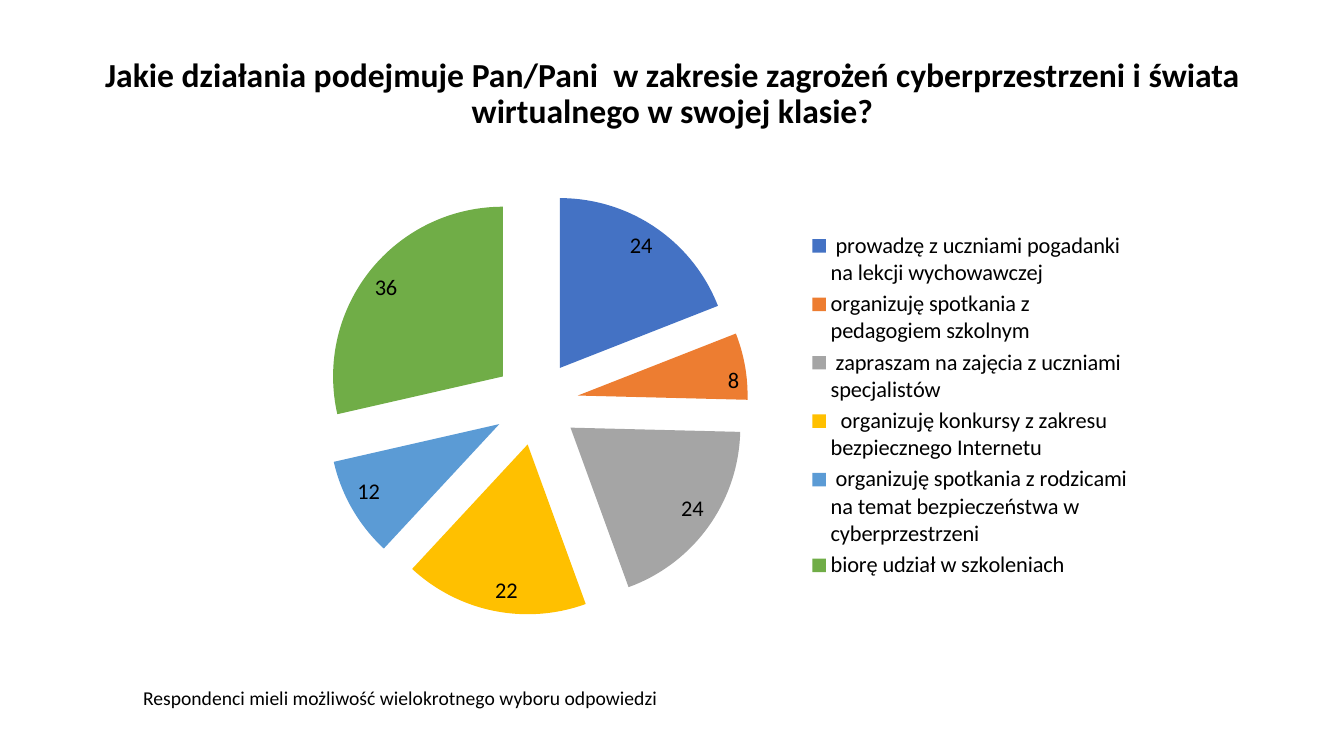
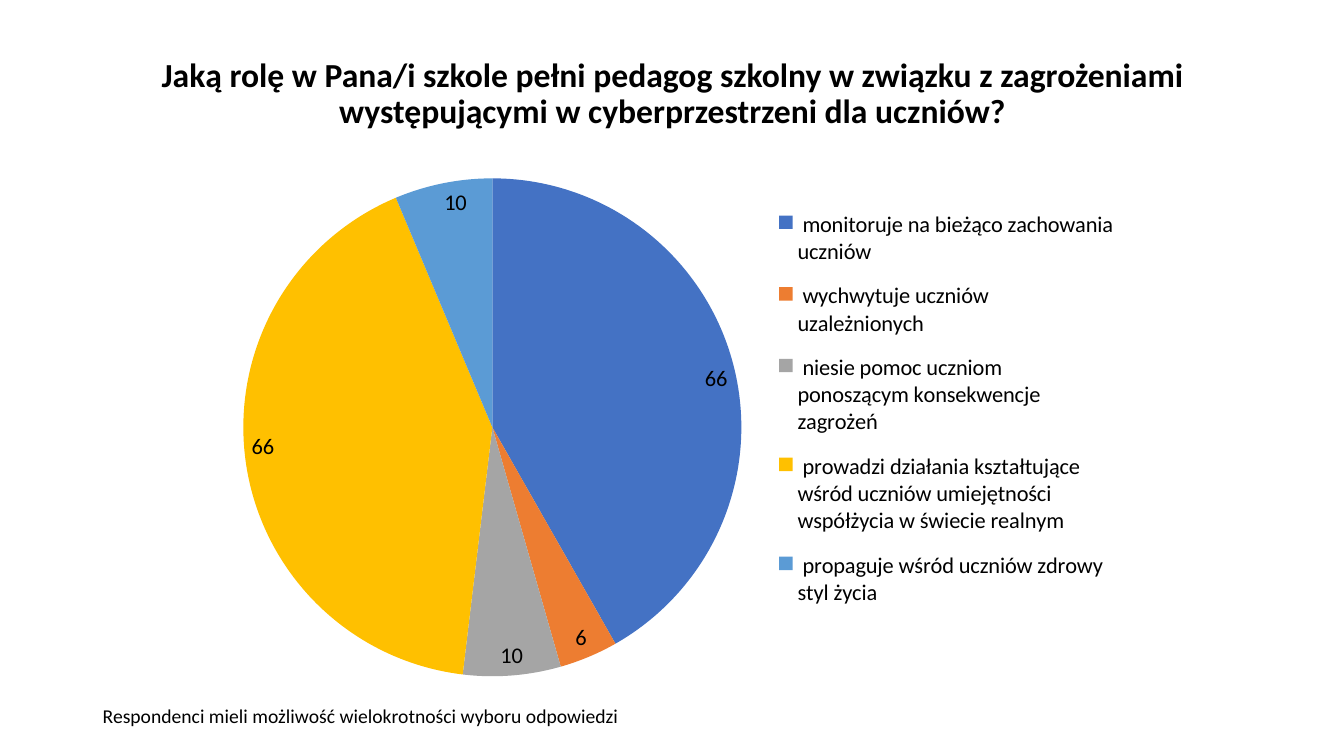
import lxml.etree
import pptx
import pptx.chart.data
import pptx.dml.color
import pptx.enum.chart
import pptx.enum.text
import pptx.oxml.ns
import pptx.util

Inches = pptx.util.Inches
Pt = pptx.util.Pt
qn = pptx.oxml.ns.qn


def color(value):
    return pptx.dml.color.RGBColor.from_string(value)


class SurveyDeck:
    """Survey slides that share a title, a pie chart and a footnote style."""

    FONT = "Calibri"
    INK = "000000"
    SLICES = ["4472C4", "ED7D31", "A5A5A5", "FFC000", "5B9BD5", "70AD47"]

    def __init__(self):
        self.deck = pptx.Presentation()
        self.deck.slide_width = Inches(13.33)
        self.deck.slide_height = Inches(7.5)
        self.slide = None

    def new_slide(self):
        self.slide = self.deck.slides.add_slide(self.deck.slide_layouts[6])

    def style(self, font, size, bold=False):
        font.name = self.FONT
        font.size = Pt(size)
        font.bold = bold
        font.color.rgb = color(self.INK)

    def text(self, content, box, size, bold=False):
        frame = self.slide.shapes.add_textbox(*map(Inches, box)).text_frame
        frame.word_wrap = True
        frame.text = content
        self.style(frame.paragraphs[0].runs[0].font, size, bold)
        return frame

    def title(self, content):
        frame = self.text(content, (0.92, 0.4, 11.5, 1.08), 24, True)
        frame.vertical_anchor = pptx.enum.text.MSO_ANCHOR.MIDDLE
        frame.paragraphs[0].alignment = pptx.enum.text.PP_ALIGN.CENTER
        frame.paragraphs[0].line_spacing = 0.9

    def footnote(self, content, left, top, width):
        self.text(content, (left, top, width, 0.34), 14)

    def place(self, part, fractions, inner=False):
        for old in part.findall(qn("c:layout")):
            part.remove(old)
        layout = lxml.etree.Element(qn("c:layout"))
        manual = lxml.etree.SubElement(layout, qn("c:manualLayout"))
        settings = [("layoutTarget", "inner")] if inner else []
        settings += [("xMode", "edge"), ("yMode", "edge")]
        settings += zip("xywh", fractions)
        for name, value in settings:
            lxml.etree.SubElement(manual, qn("c:" + name)).set("val", str(value))
        position = part.find(qn("c:legendPos"))
        part.insert(0 if position is None else 1, layout)

    def pie(self, answers, box, plot_area, legend_area, explosion=0):
        data = pptx.chart.data.CategoryChartData()
        data.categories = list(answers)
        data.add_series("Series 1", list(answers.values()))
        chart = self.slide.shapes.add_chart(
            pptx.enum.chart.XL_CHART_TYPE.PIE, *map(Inches, box), data
        ).chart
        chart.has_title = False
        self.style(chart.font, 10)

        chart.has_legend = True
        chart.legend.position = pptx.enum.chart.XL_LEGEND_POSITION.RIGHT
        chart.legend.include_in_layout = False
        self.style(chart.legend.font, 16)

        pie = chart.plots[0]
        pie.vary_by_categories = True
        pie.has_data_labels = True
        labels = pie.data_labels
        labels.show_value = True
        labels.show_percentage = False
        labels.position = pptx.enum.chart.XL_LABEL_POSITION.INSIDE_END
        self.style(labels.font, 16)

        series = pie.series[0]
        for index, shade in enumerate(self.SLICES[:len(answers)]):
            fill = series.points[index].format.fill
            fill.solid()
            fill.fore_color.rgb = color(shade)
        if explosion:
            gap = lxml.etree.Element(qn("c:explosion"))
            gap.set("val", str(explosion))
            series._element.find(qn("c:dPt")).addprevious(gap)

        chart_root = chart._chartSpace.find(qn("c:chart"))
        self.place(chart_root.find(qn("c:plotArea")), plot_area, inner=True)
        self.place(chart_root.find(qn("c:legend")), legend_area)


def main():
    survey = SurveyDeck()

    survey.new_slide()
    survey.title(
        "Jakie działania podejmuje Pan/Pani  w zakresie zagrożeń "
        "cyberprzestrzeni i świata wirtualnego w swojej klasie?"
    )
    survey.footnote(
        "Respondenci mieli możliwość wielokrotnego wyboru odpowiedzi", 1.32, 6.76, 5.35
    )
    class_actions = {
        " prowadzę z uczniami pogadanki na lekcji wychowawczej": 24,
        "organizuję spotkania z pedagogiem szkolnym": 8,
        " zapraszam na zajęcia z uczniami specjalistów": 24,
        "  organizuję konkursy z zakresu bezpiecznego Internetu": 22,
        " organizuję spotkania z rodzicami na temat bezpieczeństwa w cyberprzestrzeni": 12,
        "biorę udział w szkoleniach": 36,
    }
    survey.pie(
        class_actions,
        (1.46, 1.36, 9.89, 5.33),
        (0.16, 0.1, 0.46, 0.79),
        (0.66, 0.17, 0.33, 0.66),
        explosion=25,
    )

    survey.new_slide()
    survey.title(
        "Jaką rolę w Pana/i szkole pełni pedagog szkolny w związku z zagrożeniami "
        "występującymi w cyberprzestrzeni dla uczniów?"
    )
    survey.footnote(
        "Respondenci mieli możliwość wielokrotności wyboru odpowiedzi", 0.92, 6.93, 8.75
    )
    counsellor_roles = {
        " monitoruje na bieżąco zachowania uczniów": 66,
        " wychwytuje uczniów uzależnionych": 6,
        " niesie pomoc uczniom ponoszącym konsekwencje zagrożeń": 10,
        " prowadzi działania kształtujące wśród uczniów umiejętności "
        "współżycia w świecie realnym": 66,
        " propaguje wśród uczniów zdrowy styl życia": 10,
    }
    survey.pie(
        counsellor_roles,
        (1.77, 1.51, 9.58, 5.2),
        (0.05, 0.05, 0.55, 0.95),
        (0.62, 0.08, 0.35, 0.82),
    )

    survey.deck.save("out.pptx")


if __name__ == "__main__":
    main()
